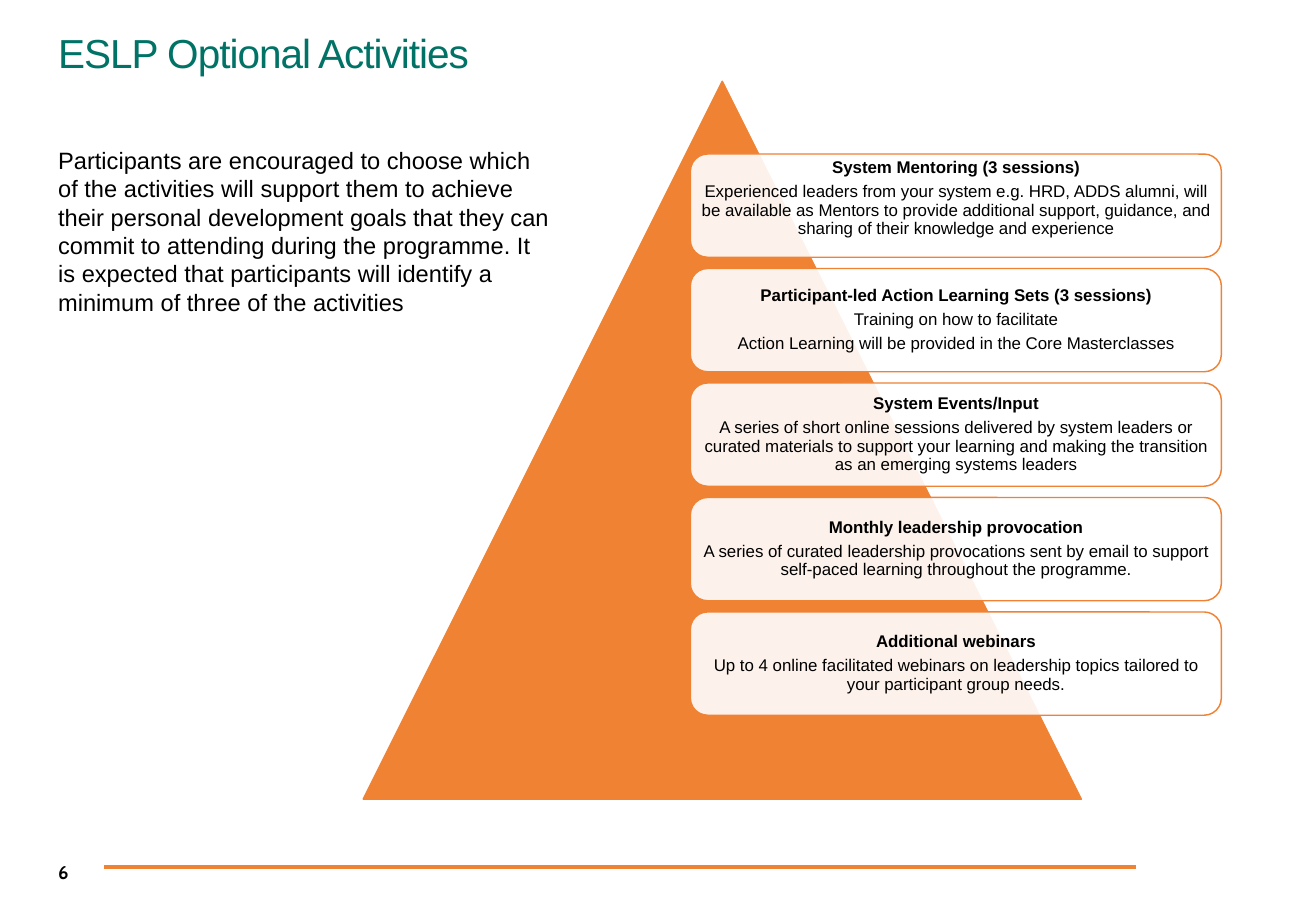
from dataclasses import dataclass
from typing import Any

import pptx
import pptx.dml.color
import pptx.enum.shapes
import pptx.enum.text
import pptx.oxml
import pptx.oxml.ns
import pptx.util
from lxml import etree

Pt = pptx.util.Pt
RGBColor = pptx.dml.color.RGBColor
Kind = pptx.enum.shapes.MSO_SHAPE
Align = pptx.enum.text.PP_ALIGN
Anchor = pptx.enum.text.MSO_ANCHOR
qn = pptx.oxml.ns.qn

ORANGE = RGBColor(0xEF, 0x82, 0x33)
GREEN = RGBColor(0x00, 0x72, 0x66)
BLACK = RGBColor(0x00, 0x00, 0x00)
WHITE = RGBColor(0xFF, 0xFF, 0xFF)

EDGE = 27.36
STEP = 67.86
THIN = 0.85

INSET = {
    "margin_left": Pt(3),
    "margin_right": Pt(3),
    "margin_top": Pt(3),
    "margin_bottom": Pt(3),
    "vertical_anchor": Anchor.MIDDLE,
    "word_wrap": True,
}
RAISED = INSET | {"margin_top": Pt(0), "vertical_anchor": Anchor.TOP}
CENTRED = {"alignment": Align.CENTER, "line_spacing": 0.9, "space_after": Pt(3.5)}


@dataclass(frozen=True)
class Box:
    left: float
    top: float
    width: float
    height: float

    def spread(self) -> tuple:
        return tuple(Pt(v) for v in (self.left, self.top, self.width, self.height))


@dataclass(frozen=True)
class Card:
    title: str
    lines: tuple[str, ...]
    frame: dict[str, Any]


@dataclass(frozen=True)
class Label:
    text: str
    box: Box
    size: float
    color: RGBColor = BLACK
    name: str = "Arial"
    bold: bool = False
    anchor: Any = Anchor.TOP
    track: int = 0


CARDS = (
    Card("System Mentoring (3 sessions)", (
        "Experienced leaders from your system e.g. HRD, ADDS alumni, will be available "
        "as Mentors to provide additional support, guidance, and sharing of their "
        "knowledge and experience",), RAISED),
    Card("Participant-led Action Learning Sets (3 sessions)", (
        "Training on how to facilitate",
        "Action Learning will be provided in the Core Masterclasses"), INSET),
    Card("System Events/Input", (
        "A series of short online sessions delivered by system leaders or curated "
        "materials to support your learning and making the transition as an emerging "
        "systems leaders",), INSET),
    Card("Monthly leadership provocation", (
        "A series of curated leadership provocations sent by email to support "
        "self-paced learning throughout the programme.",), INSET),
    Card("Additional webinars", (
        "Up to 4 online facilitated webinars on leadership topics tailored to your "
        "participant group needs.",), INSET),
)

LABELS = (
    Label("ESLP Optional Activities", Box(EDGE, 12.96, 402.5, 36), 24, GREEN, track=-60),
    Label("Participants are encouraged to choose which of the activities will support "
          "them to achieve their personal development goals that they can commit to "
          "attending during the programme. It is expected that participants will "
          "identify a minimum of three of the activities",
          Box(EDGE, 82.8, 306, 108.7), 14),
    Label("6", Box(EDGE, 502.56, 97.9, 28.8), 11, name="Cabin", bold=True,
          anchor=Anchor.MIDDLE),
)


def style(thing: Any, form: dict[str, Any]) -> None:
    for key, value in form.items():
        setattr(thing, key, value)


def write(para: Any, text: str, size: float, color: RGBColor,
          name: str = "Arial", bold: bool = False) -> Any:
    run = para.add_run()
    run.text = text
    style(run.font, {"size": Pt(size), "name": name, "bold": bold})
    run.font.color.rgb = color
    return run


def draw_shape(slide: Any, kind: Any, box: Box, fill: RGBColor) -> Any:
    shape = slide.shapes.add_shape(kind, *box.spread())
    shape.shadow.inherit = False
    shape.fill.solid()
    shape.fill.fore_color.rgb = fill
    shape.line.color.rgb = ORANGE
    shape.line.width = Pt(THIN)
    return shape


def draw_rule(slide: Any) -> None:
    rule = slide.shapes.add_connector(
        pptx.enum.shapes.MSO_CONNECTOR.STRAIGHT, Pt(61.4), Pt(514), Pt(673.2), Pt(514))
    rule.line.color.rgb = ORANGE
    rule.line.width = Pt(2.25)
    etree.SubElement(rule._element.spPr, qn("a:effectLst"))


def draw_card(slide: Any, card: Card, top: float) -> None:
    shape = draw_shape(slide, Kind.ROUNDED_RECTANGLE, Box(409.1, top, 314.6, 61.2), WHITE)
    color = shape._element.spPr.find(qn("a:solidFill")).find(qn("a:srgbClr"))
    etree.SubElement(color, qn("a:alpha")).set("val", "90000")
    frame = shape.text_frame
    style(frame, card.frame)
    for index, text in enumerate((card.title, *card.lines)):
        para = frame.add_paragraph() if index else frame.paragraphs[0]
        style(para, CENTRED)
        write(para, text, 10, BLACK, bold=index == 0)


def draw_label(slide: Any, label: Label) -> None:
    frame = slide.shapes.add_textbox(*label.box.spread()).text_frame
    style(frame, {"word_wrap": True, "vertical_anchor": label.anchor})
    run = write(frame.paragraphs[0], label.text, label.size, label.color,
                label.name, label.bold)
    if label.track:
        run._r.get_or_add_rPr().set("spc", str(label.track))


def main() -> None:
    deck = pptx.Presentation()
    style(deck, {"slide_width": Pt(779.76), "slide_height": Pt(540)})
    slide = deck.slides.add_slide(deck.slide_layouts[6])
    draw_rule(slide)
    draw_shape(slide, Kind.ISOSCELES_TRIANGLE, Box(215.2, 48.2, 425.5, 425.5), ORANGE)
    for index, card in enumerate(CARDS):
        draw_card(slide, card, 91.3 + index * STEP)
    for label in LABELS:
        draw_label(slide, label)
    deck.save("out.pptx")


if __name__ == "__main__":
    main()
